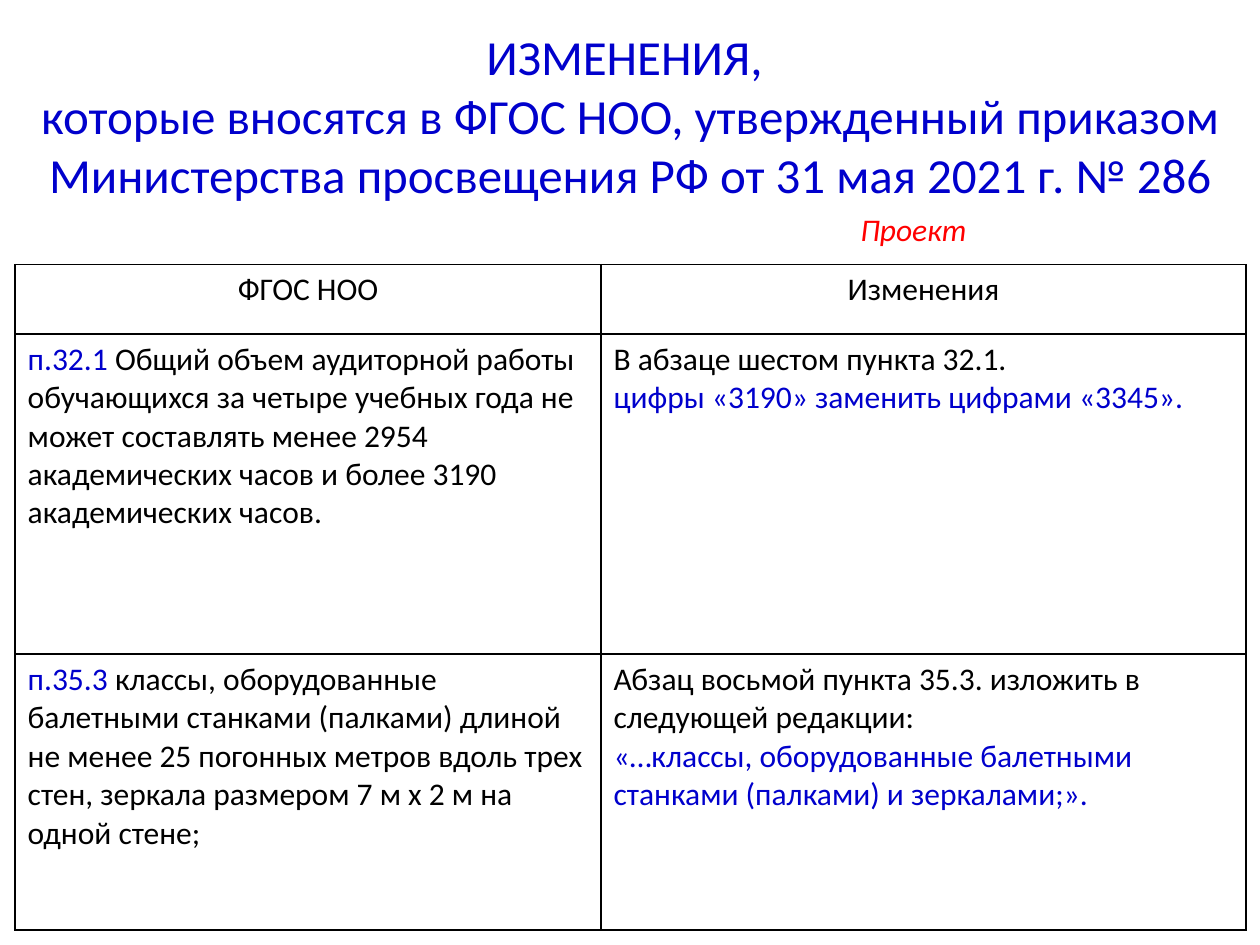
import pptx
import pptx.dml.color
import pptx.enum.text
import pptx.oxml
import pptx.oxml.ns
import pptx.util
from pptx.util import Inches

BLUE, BLACK, RED, WHITE = "0000CC", "000000", "FF0000", "FFFFFF"
CENTER = pptx.enum.text.PP_ALIGN.CENTER
LEFT = pptx.enum.text.PP_ALIGN.LEFT


def color(value):
    return pptx.dml.color.RGBColor.from_string(value)


def add_run(paragraph, text, text_color, size=18):
    run = paragraph.add_run()
    run.text = text
    run.font.name = "Calibri"
    run.font.size = pptx.util.Pt(size)
    run.font.color.rgb = color(text_color)
    return run


presentation = pptx.Presentation()
presentation.slide_width = Inches(10)
presentation.slide_height = Inches(7.5)
slide = presentation.slides.add_slide(presentation.slide_layouts[6])

# Title
title = slide.shapes.add_textbox(Inches(0), Inches(0.13), Inches(10), Inches(1.57))
title.text_frame.word_wrap = True
title.text_frame.vertical_anchor = pptx.enum.text.MSO_ANCHOR.MIDDLE
paragraph = title.text_frame.paragraphs[0]
paragraph.alignment = CENTER
add_run(paragraph, "ИЗМЕНЕНИЯ, ", BLUE, 28)
paragraph.add_line_break()
add_run(paragraph, "которые вносятся в ФГОС НОО, утвержденный приказом "
        "Министерства просвещения РФ от 31 мая 2021 г. № 286", BLUE, 28)

# Comparison table: rows > cells > paragraphs > (text, color) runs
rows = [
    [
        [[("ФГОС НОО", BLACK)]],
        [[("Изменения", BLACK)]],
    ],
    [
        [[("п.32.1 ", BLUE),
          ("Общий объем аудиторной работы обучающихся за четыре учебных года "
           "не может составлять менее 2954 академических часов и более 3190 "
           "академических часов.", BLACK)]],
        [[("В абзаце шестом пункта 32.1.", BLACK)],
         [("цифры «3190» заменить цифрами «3345».", BLUE)]],
    ],
    [
        [[("п.35.3 ", BLUE),
          ("классы, оборудованные балетными станками (палками) длиной не менее "
           "25 погонных метров вдоль трех стен, зеркала размером 7 м х 2 м на "
           "одной стене;", BLACK)]],
        [[("Абзац восьмой пункта 35.3. изложить в следующей редакции:", BLACK)],
         [("«…классы, оборудованные балетными станками (палками) и "
           "зеркалами;».", BLUE)]],
    ],
]
column_widths = [4.65, 5.12]
row_heights = [0.55, 2.54, 2.19]
table = slide.shapes.add_table(
    len(rows), len(column_widths), Inches(0.12), Inches(2.1),
    Inches(sum(column_widths)), Inches(sum(row_heights))).table
table.first_row = False
table.horz_banding = False
for column, width in zip(table.columns, column_widths):
    column.width = Inches(width)
for row, height in zip(table.rows, row_heights):
    row.height = Inches(height)

for row_index, row_cells in enumerate(rows):
    for column_index, paragraphs in enumerate(row_cells):
        cell = table.cell(row_index, column_index)
        for index, runs in enumerate(paragraphs):
            frame = cell.text_frame
            paragraph = frame.add_paragraph() if index else frame.paragraphs[0]
            paragraph.alignment = LEFT if row_index else CENTER
            for text, text_color in runs:
                add_run(paragraph, text, text_color)
        properties = cell._tc.get_or_add_tcPr()
        for side in ("lnL", "lnR", "lnT", "lnB"):
            properties.append(pptx.oxml.parse_xml(
                f'<a:{side} {pptx.oxml.ns.nsdecls("a")} w="12700"><a:solidFill>'
                f'<a:srgbClr val="{BLACK}"/></a:solidFill></a:{side}>'))
        cell.fill.solid()
        cell.fill.fore_color.rgb = color(WHITE)

# Draft mark
draft = slide.shapes.add_textbox(Inches(6.73), Inches(1.62), Inches(3.07), Inches(0.4))
draft.text_frame.word_wrap = True
draft.text_frame.auto_size = pptx.enum.text.MSO_AUTO_SIZE.SHAPE_TO_FIT_TEXT
add_run(draft.text_frame.paragraphs[0], "Проект", RED).font.italic = True

presentation.save("out.pptx")
